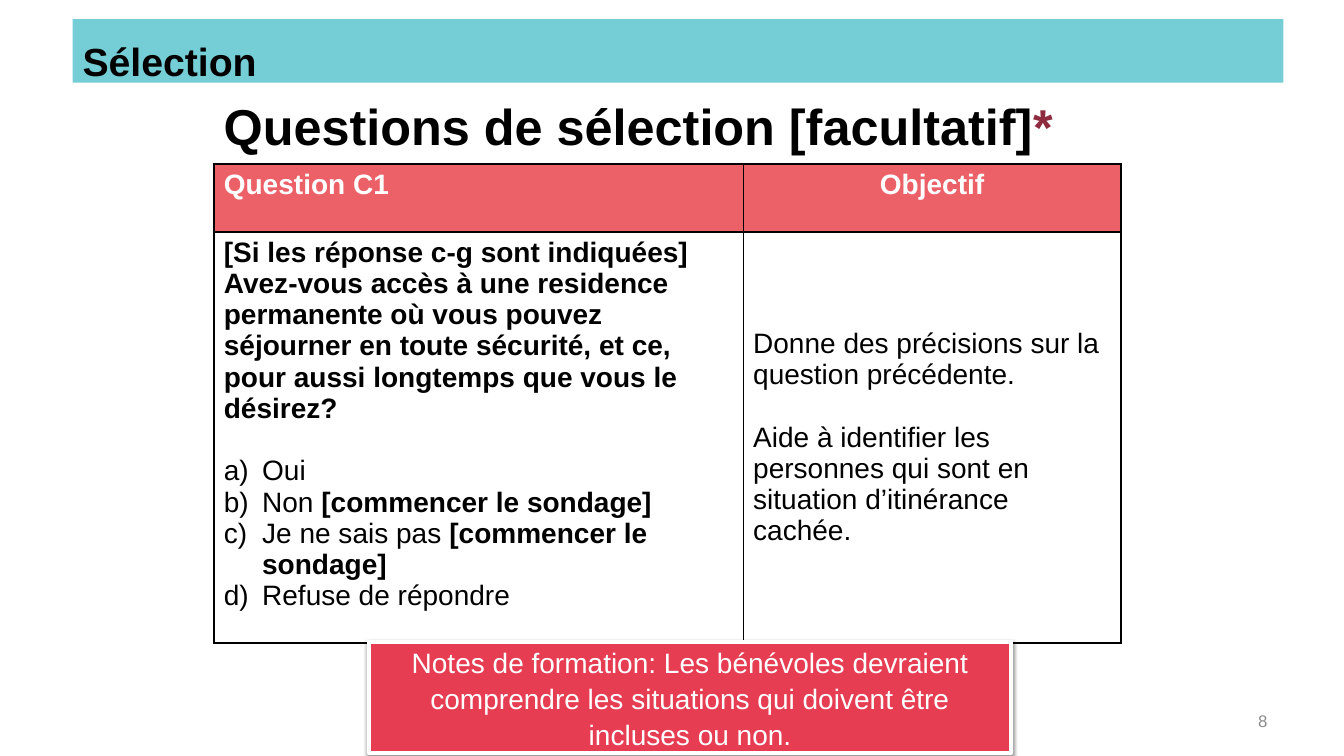
from lxml import etree
from pptx import Presentation
from pptx.dml.color import RGBColor as RGB
from pptx.enum.shapes import MSO_SHAPE as Shape
from pptx.enum.text import MSO_ANCHOR as Anchor, PP_ALIGN as Align
from pptx.oxml import parse_xml
from pptx.oxml.ns import nsdecls, qn
from pptx.util import Inches, Pt

COLORS = {
    "black": "000000", "white": "FFFFFF", "teal": "75CED6", "coral": "EC6168",
    "red": "E63D52", "wine": "8E2B3F", "gray": "8C8C8C",
}
BLANK_LINE = Pt(22.34)
TABLE_LEFT, TABLE_TOP = 2.12, 1.63
COLUMNS, ROWS = (5.25, 3.75), (0.67, 3.82)


def add_span(para, text, size=20, color="black", bold=False):
    span = para.add_run()
    span.text = text
    font = span.font
    font.name, font.size, font.bold = "Arial", Pt(size), bold
    font.color.rgb = RGB.from_string(COLORS[color])


def add_box(left, top, width, height, fill=None, anchor=Anchor.MIDDLE):
    """Add a rectangle, or a plain text box without fill, and return it."""
    area = [Inches(value) for value in (left, top, width, height)]
    if fill:
        box = slide.shapes.add_shape(Shape.RECTANGLE, *area)
        box.shadow.inherit = False
        box.fill.solid()
        box.fill.fore_color.rgb = RGB.from_string(COLORS[fill])
        box.line.fill.background()
    else:
        box = slide.shapes.add_textbox(*area)
    box.text_frame.word_wrap = True
    box.text_frame.vertical_anchor = anchor
    return box


deck = Presentation()
deck.slide_width, deck.slide_height = Inches(13.33), Inches(7.5)
slide = deck.slides.add_slide(deck.slide_layouts[6])

# Title and section banner
title = add_box(TABLE_LEFT, 0.86, 8.88, 0.77)
para = title.text_frame.paragraphs[0]
add_span(para, "Questions de sélection [facultatif]", 36, bold=True)
add_span(para, "*", 36, "wine", True)

banner = add_box(0.72, 0.19, 12.01, 0.63, "teal", Anchor.TOP)
para = banner.text_frame.paragraphs[0]
para.alignment = Align.LEFT
para.line_spacing = Pt(43.2)
add_span(para, "Sélection", 28, bold=True)

# Question table: each cell is a list of paragraphs, each a list of (text, bold)
question = [
    [("[Si les réponse c-g sont indiquées] Avez-vous accès à une residence "
      "permanente où vous pouvez séjourner en toute sécurité, et ce, pour "
      "aussi longtemps que vous le désirez?", True)],
    [("Oui", False)],
    [("Non", False), (" [commencer le sondage]", True)],
    [("Je ne sais pas ", False), ("[commencer le sondage]", True)],
    [("Refuse de répondre", False)],
]
purpose = [
    [("Donne des précisions sur la question précédente.", False)],
    [("Aide à identifier les personnes qui sont en situation d’itinérance "
      "cachée.", False)],
]
contents = [
    [[[("Question C1", True)]], [[("Objectif", True)]]],
    [question, purpose],
]
frame = slide.shapes.add_table(
    len(ROWS), len(COLUMNS), Inches(TABLE_LEFT), Inches(TABLE_TOP),
    Inches(sum(COLUMNS)), Inches(sum(ROWS)))
table = frame.table
for column, width in zip(table.columns, COLUMNS):
    column.width = Inches(width)
for row, height in zip(table.rows, ROWS):
    row.height = Inches(height)

for row_index, row_contents in enumerate(contents):
    for column_index, paragraphs in enumerate(row_contents):
        cell = table.cell(row_index, column_index)
        is_header, is_answer = row_index == 0, column_index == 0
        borders = {"L": 1.5 if is_answer else 0.5,
                   "R": 0.5 if is_answer else 1.5, "T": 1.5, "B": 1.5}
        for side, weight in borders.items():
            cell._tc.get_or_add_tcPr().append(parse_xml(
                f'<a:ln{side} {nsdecls("a")} w="{Pt(weight)}"><a:solidFill>'
                f'<a:srgbClr val="{COLORS["black"]}"/></a:solidFill></a:ln{side}>'))
        cell.fill.solid()
        cell.fill.fore_color.rgb = RGB.from_string(
            COLORS["coral" if is_header else "white"])
        centered = not is_header and not is_answer
        cell.vertical_anchor = Anchor.MIDDLE if centered else Anchor.TOP
        for index, spans in enumerate(paragraphs):
            text = cell.text_frame
            para = text.add_paragraph() if index else text.paragraphs[0]
            if is_header and not is_answer:
                para.alignment = Align.CENTER
            if index == 1:
                para.space_before = BLANK_LINE
            if index and is_answer:
                properties = para._p.get_or_add_pPr()
                properties.set("marL", str(Inches(0.38)))
                properties.set("indent", str(-Inches(0.38)))
                bullet = etree.SubElement(properties, qn("a:buAutoNum"))
                bullet.set("type", "alphaLcParenR")
            for words, bold in spans:
                add_span(para, words, 20, "white" if is_header else "black", bold)

# Training note with a soft shadow
note = add_box(3.66, 6.37, 6.37, 1.1, "red")
note.line.color.rgb = RGB.from_string(COLORS["white"])
note.line.width = Pt(3)
effects = note._element.spPr.find(qn("a:effectLst"))
effects.append(parse_xml(
    f'<a:outerShdw {nsdecls("a")} blurRad="{Pt(3.1)}" dist="{Pt(1.6)}" '
    f'dir="5400000" rotWithShape="0"><a:srgbClr val="{COLORS["black"]}">'
    '<a:alpha val="38000"/></a:srgbClr></a:outerShdw>'))
para = note.text_frame.paragraphs[0]
para.alignment = Align.CENTER
para.line_spacing = 1.07
add_span(para, "Notes de formation: Les bénévoles devraient comprendre les "
         "situations qui doivent être incluses ou non.", color="white")

# Page number
number = add_box(9.56, 6.95, 3.11, 0.4)
para = number.text_frame.paragraphs[0]
para.alignment = Align.RIGHT
add_span(para, "8", 12, "gray")

deck.save("out.pptx")
